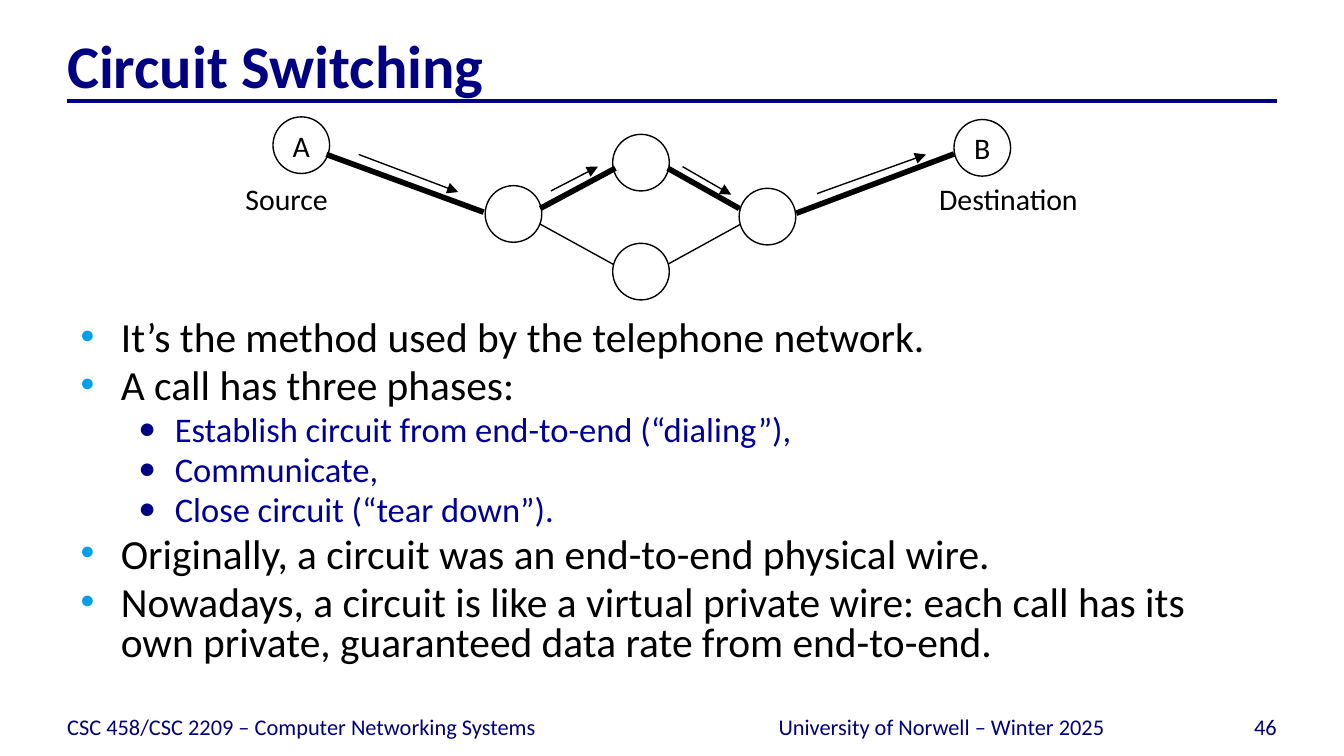
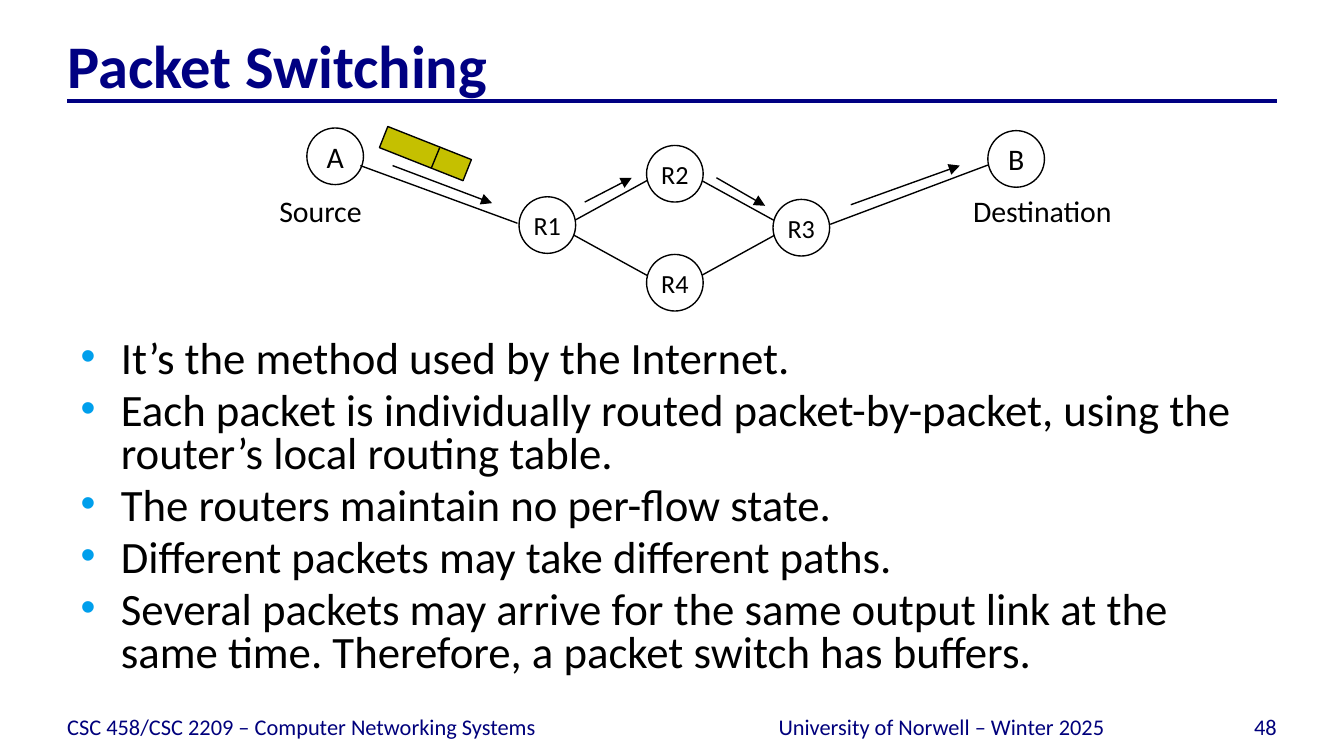
from dataclasses import dataclass

from lxml.etree import SubElement
from pptx import Presentation
from pptx.dml.color import RGBColor
from pptx.enum.shapes import MSO_CONNECTOR, MSO_SHAPE
from pptx.enum.text import MSO_ANCHOR, MSO_AUTO_SIZE, PP_ALIGN
from pptx.oxml.ns import qn
from pptx.shapes.autoshape import Shape
from pptx.slide import Slide
from pptx.text.text import TextFrame
from pptx.util import Cm, Pt

FONT = "Calibri"
COLORS = {
    "title": "000082",
    "footer": "00007C",
    "text": "000000",
    "subtext": "000099",
    "bullet": "009FEC",
    "subbullet": "000082",
    "router": "FFFFFF",
    "packet": "C5C000",
}
MARGIN, CONTENT_WIDTH = 1.27, 22.86
NODE_SIZE = 1.07
THIN, THICK = 0.75, 3


@dataclass(frozen=True)
class Node:
    left: float
    top: float
    host: str = ""
    router: str = ""


@dataclass(frozen=True)
class Segment:
    x1: float
    y1: float
    x2: float
    y2: float


@dataclass(frozen=True)
class Caption:
    text: str
    left: float
    width: float


@dataclass(frozen=True)
class Footer:
    text: str
    left: float
    width: float
    align: PP_ALIGN


@dataclass(frozen=True)
class BulletStyle:
    char: str
    char_color: str
    char_size: int
    text_color: str
    indent: float
    hanging: float


@dataclass(frozen=True)
class Point:
    text: str
    level: int = 0


@dataclass(frozen=True)
class Topic:
    title: str
    number: int
    points: tuple[Point, ...]
    sizes: tuple[float, float]
    body_top: float
    body_height: float
    shift: tuple[float, float]
    is_circuit: bool


NODES = (
    Node(5.16, 2.21, host="A"),
    Node(9.17, 3.51, router="R1"),
    Node(11.58, 2.54, router="R2"),
    Node(11.58, 4.6, router="R4"),
    Node(13.97, 3.56, router="R3"),
    Node(18.03, 2.26, host="B"),
)
ACCESS_LINKS = (Segment(6.17, 2.92, 9.14, 4.01), Segment(15.05, 4.03, 18.03, 2.91))
CIRCUIT_HOPS = (Segment(10.21, 3.94, 11.63, 3.18), Segment(12.62, 3.18, 13.97, 3.94))
FLOW_ARROWS = (
    Segment(6.78, 2.92, 8.66, 3.63),
    Segment(10.41, 3.61, 11.3, 3.15),
    Segment(12.9, 3.15, 13.82, 3.68),
    Segment(15.44, 3.66, 17.5, 2.92),
)
CAPTIONS = (Caption("Source", 4.39, 2.69), Caption("Destination", 17.5, 4.09))
BULLETS = (
    BulletStyle("•", "bullet", 95, "text", 0.76, 0.76),
    BulletStyle("●", "subbullet", 85, "subtext", 1.78, 0.69),
)
TOPICS = (
    Topic(
        "Circuit Switching",
        46,
        (
            Point("It’s the method used by the telephone network."),
            Point("A call has three phases:"),
            Point("Establish circuit from end-to-end (“dialing”),", 1),
            Point("Communicate,", 1),
            Point("Close circuit (“tear down”).", 1),
            Point("Originally, a circuit was an end-to-end physical wire."),
            Point("Nowadays, a circuit is like a virtual private wire: each call "
                  "has its own private, guaranteed data rate from end-to-end."),
        ),
        sizes=(22.2, 18.5),
        body_top=5.94,
        body_height=7.52,
        shift=(0, 0),
        is_circuit=True,
    ),
    Topic(
        "Packet Switching",
        48,
        (
            Point("It’s the method used by the Internet."),
            Point("Each packet is individually routed packet-by-packet, using "
                  "the router’s local routing table."),
            Point("The routers maintain no per-flow state."),
            Point("Different packets may take different paths."),
            Point("Several packets may arrive for the same output link at the "
                  "same time. Therefore, a packet switch has buffers."),
        ),
        sizes=(24, 20),
        body_top=6.3,
        body_height=6.98,
        shift=(0.64, 0.21),
        is_circuit=False,
    ),
)


def rgb(name: str) -> RGBColor:
    return RGBColor.from_string(COLORS[name])


def place(shape: Shape, left: float, top: float, width: float, height: float) -> None:
    shape.left, shape.top = Cm(left), Cm(top)
    shape.width, shape.height = Cm(width), Cm(height)


def set_insets(frame: TextFrame, top: float = 0) -> None:
    frame.margin_left = frame.margin_right = frame.margin_bottom = Cm(0)
    frame.margin_top = Cm(top)


def write(paragraph, text: str, size: float, color: str,
          align: PP_ALIGN = PP_ALIGN.LEFT, bold: bool = False) -> None:
    paragraph.text = text
    paragraph.alignment = align
    font = paragraph.font
    font.name, font.size, font.bold = FONT, Pt(size), bold
    font.color.rgb = rgb(color)


def add_line(slide: Slide, segment: Segment, shift: tuple[float, float] = (0, 0),
             width: float = THIN, color: str = "text", arrow: bool = False) -> None:
    dx, dy = shift
    line = slide.shapes.add_connector(
        MSO_CONNECTOR.STRAIGHT,
        Cm(segment.x1 + dx), Cm(segment.y1 + dy),
        Cm(segment.x2 + dx), Cm(segment.y2 + dy),
    )
    line.line.color.rgb = rgb(color)
    line.line.width = Pt(width)
    properties = line._element.spPr
    if arrow:
        SubElement(properties.find(qn("a:ln")), qn("a:tailEnd"), type="triangle")
    SubElement(properties, qn("a:effectLst"))


def add_outlined(slide: Slide, kind: MSO_SHAPE, left: float, top: float,
                 width: float, height: float, fill: str = "") -> Shape:
    shape = slide.shapes.add_shape(kind, Cm(left), Cm(top), Cm(width), Cm(height))
    shape.shadow.inherit = False
    shape.line.color.rgb = rgb("text")
    shape.line.width = Pt(THIN)
    if fill:
        shape.fill.solid()
        shape.fill.fore_color.rgb = rgb(fill)
    else:
        shape.fill.background()
    return shape


def add_node(slide: Slide, node: Node, shift: tuple[float, float], named: bool) -> None:
    circle = add_outlined(slide, MSO_SHAPE.OVAL, node.left + shift[0], node.top + shift[1],
                          NODE_SIZE, NODE_SIZE, "" if node.host else "router")
    label = node.host or (node.router if named else "")
    if label:
        frame = circle.text_frame
        set_insets(frame)
        frame.word_wrap = False
        frame.vertical_anchor = MSO_ANCHOR.MIDDLE
        write(frame.paragraphs[0], label, 16 if node.host else 14, "text", PP_ALIGN.CENTER)


def add_network(slide: Slide, topic: Topic) -> None:
    dx, dy = topic.shift
    add_outlined(slide, MSO_SHAPE.FLOWCHART_DECISION, 9.96 + dx, 2.92 + dy, 4.29, 2.36)
    for node in NODES:
        add_node(slide, node, topic.shift, named=not topic.is_circuit)
    for link in ACCESS_LINKS:
        add_line(slide, link, topic.shift, THICK if topic.is_circuit else THIN)
    for arrow in FLOW_ARROWS:
        add_line(slide, arrow, topic.shift, arrow=True)
    for caption in CAPTIONS:
        box = slide.shapes.add_textbox(Cm(caption.left + dx), Cm(3.3 + dy),
                                       Cm(caption.width), Cm(0.94))
        box.text_frame.word_wrap = True
        write(box.text_frame.paragraphs[0], caption.text, 16, "text")
    if topic.is_circuit:
        for hop in CIRCUIT_HOPS:
            add_line(slide, hop, topic.shift, THICK)
    else:
        packet = add_outlined(slide, MSO_SHAPE.RECTANGLE, 7.19, 2.69, 1.7, 0.43, "packet")
        packet.rotation = 21.6
        add_line(slide, Segment(8.31, 2.79, 8.15, 3.18))


def add_bullet(paragraph, style: BulletStyle) -> None:
    properties = paragraph._p.get_or_add_pPr()
    properties.set("marL", str(Cm(style.indent)))
    properties.set("indent", str(-Cm(style.hanging)))
    color = SubElement(properties, qn("a:buClr"))
    SubElement(color, qn("a:srgbClr"), val=COLORS[style.char_color])
    SubElement(properties, qn("a:buSzPct"), val=str(style.char_size * 1000))
    SubElement(properties, qn("a:buFont"), typeface="Arial")
    SubElement(properties, qn("a:buChar"), char=style.char)


def fill_points(body: Shape, topic: Topic) -> None:
    place(body, MARGIN, topic.body_top, CONTENT_WIDTH, topic.body_height)
    frame = body.text_frame
    frame.auto_size = MSO_AUTO_SIZE.NONE
    for index, point in enumerate(topic.points):
        paragraph = frame.add_paragraph() if index else frame.paragraphs[0]
        style = BULLETS[point.level]
        paragraph.level = point.level
        paragraph.line_spacing = 0.8
        add_bullet(paragraph, style)
        write(paragraph, point.text, topic.sizes[point.level], style.text_color)


def add_frame(slide: Slide, topic: Topic) -> None:
    """Set the title with its rule, and the three footers."""
    title = slide.shapes.title
    place(title, MARGIN, 0.64, CONTENT_WIDTH, 1.27)
    frame = title.text_frame
    frame.auto_size = MSO_AUTO_SIZE.NONE
    frame.vertical_anchor = MSO_ANCHOR.BOTTOM
    set_insets(frame, top=0.13)
    write(frame.paragraphs[0], topic.title, 32.4, "title", bold=True)
    add_line(slide, Segment(MARGIN, 1.91, MARGIN + CONTENT_WIDTH, 1.91),
             width=2.25, color="title")
    footers = (
        Footer("CSC 458/CSC 2209 – Computer Networking Systems", MARGIN, 12.27, PP_ALIGN.LEFT),
        Footer("University of Norwell – Winter 2025", 13.77, 8.05, PP_ALIGN.CENTER),
        Footer(str(topic.number), 22.01, 2.12, PP_ALIGN.RIGHT),
    )
    for footer in footers:
        box = slide.shapes.add_textbox(Cm(footer.left), Cm(13.23), Cm(footer.width), Cm(0.76))
        set_insets(box.text_frame)
        box.text_frame.word_wrap = True
        box.text_frame.vertical_anchor = MSO_ANCHOR.BOTTOM
        write(box.text_frame.paragraphs[0], footer.text, 12, "footer", footer.align)


def main() -> None:
    deck = Presentation()
    deck.slide_width, deck.slide_height = Cm(25.4), Cm(14.29)
    for topic in TOPICS:
        slide = deck.slides.add_slide(deck.slide_layouts[1])
        add_frame(slide, topic)
        fill_points(slide.placeholders[1], topic)
        add_network(slide, topic)
    deck.save("out.pptx")


if __name__ == "__main__":
    main()
